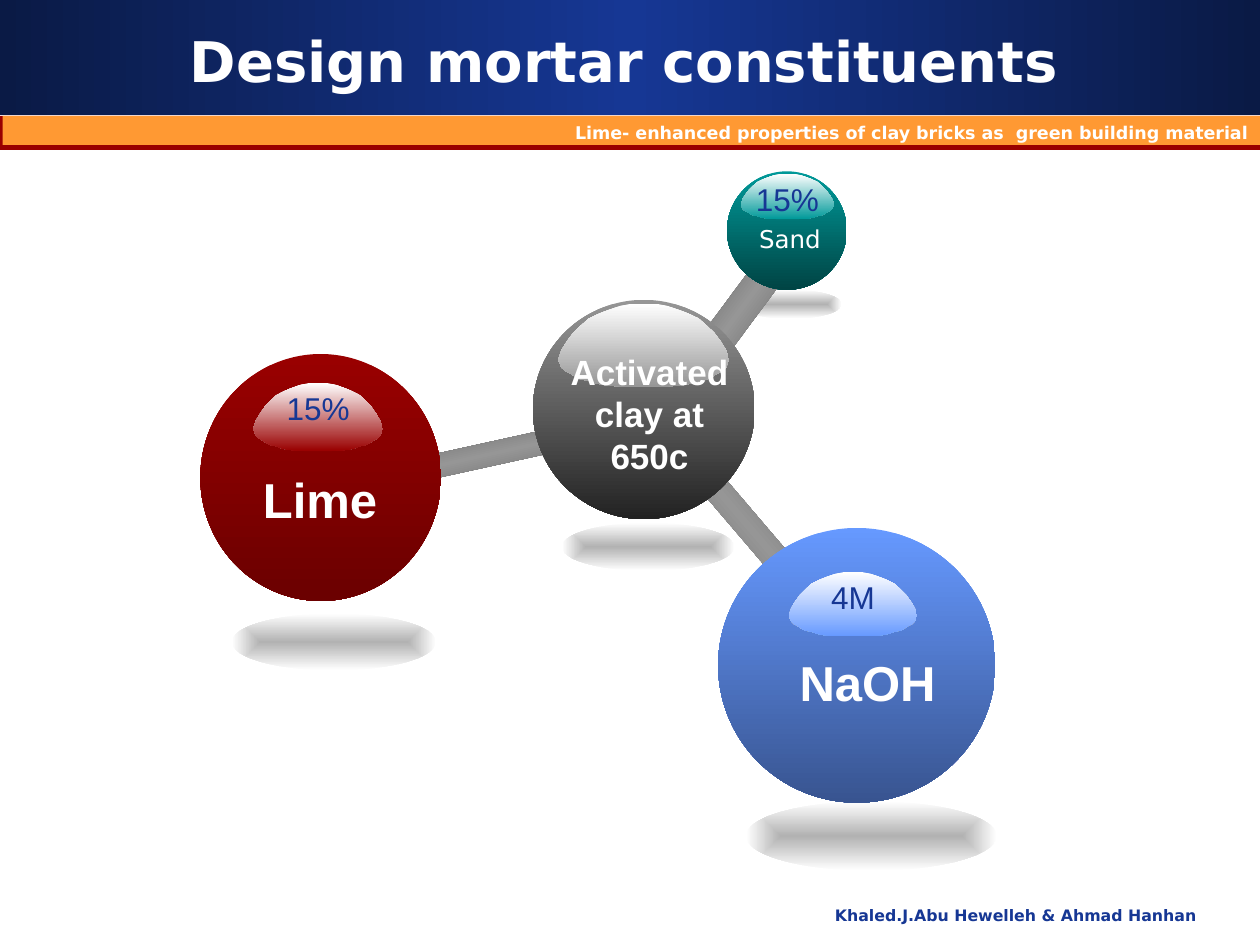
from lxml.etree import SubElement
from pptx import Presentation
from pptx.dml.color import RGBColor
from pptx.enum.shapes import MSO_SHAPE
from pptx.enum.text import MSO_ANCHOR, PP_ALIGN
from pptx.oxml.ns import qn
from pptx.util import Inches, Pt

HEX = {
    "navy": "0A1A45", "blue": "163794", "red": "990000", "orange": "FF9933",
    "white": "FFFFFF", "shade": "B2B2B2", "grey": "969696", "steel": "6B6B6B",
    "coal": "222222", "teal": "009999", "pine": "004444", "wine": "6B0000",
    "sky": "6699FF", "slate": "385490",
}
SANS, ARIAL = "DejaVu Sans", "Arial"

TITLE = "Design mortar constituents"
TOPIC = "Lime- enhanced properties of clay bricks as  green building material"
AUTHORS = "Khaled.J.Abu Hewelleh & Ahmad Hanhan"

# Boxes are left, top, width, height in inches
SHADOWS = [
    (5.87, 2.3, 0.81, 0.23), (4.46, 4.15, 1.37, 0.38),
    (5.92, 6.36, 1.99, 0.55), (1.84, 4.87, 1.62, 0.45),
]
RODS = [
    ((5.38, 4.03, 1.05, 0.21), 229.5),
    ((3.2, 3.54, 1.1, 0.19), 347.6),
    ((5.56, 2.32, 0.65, 0.26), 306.6),
]
BALLS = [
    dict(box=(4.23, 2.38, 1.76, 1.74), top="grey", low="coal",
         gloss=(4.43, 2.41, 1.36, 0.66), share="",
         name="Activated clay at 650c", label=(4.29, 2.73, 1.73, 1.11),
         font=ARIAL, size=20, bold=True, wrap=True),
    dict(box=(5.77, 1.36, 0.95, 0.94), top="teal", low="pine",
         gloss=(5.88, 1.38, 0.74, 0.36), share="15%",
         name="Sand", label=(5.92, 1.73, 0.7, 0.34),
         font=SANS, size=14, bold=False, wrap=False),
    dict(box=(1.59, 2.81, 1.91, 1.96), top="red", low="wine",
         gloss=(2.01, 3.04, 1.03, 0.54), share="15%",
         name="Lime", label=(1.98, 3.68, 1.12, 0.57),
         font=ARIAL, size=28, bold=True, wrap=False),
    dict(box=(5.7, 4.19, 2.2, 2.18), top="sky", low="slate",
         gloss=(6.26, 4.54, 1.02, 0.51), share="4M",
         name="NaOH", label=(6.24, 5.13, 1.29, 0.57),
         font=ARIAL, size=28, bold=True, wrap=False),
]
# Right half of a highlight, in percent of its box; the left half mirrors it
HALF = [
    (50, 0), (57, 0), (64, 3), (71, 8), (76, 12), (82, 18), (87, 27),
    (91, 35), (95, 46), (98, 56), (100, 68), (99, 72), (98, 77), (96, 81),
    (93, 84), (90, 88), (87, 91), (82, 93), (78, 96), (73, 98), (68, 99),
    (60, 100),
]
DOME = HALF + [(100 - x, y) for x, y in reversed(HALF[1:])]


def inches(box):
    return [Inches(n) for n in box]


def color(name):
    return RGBColor.from_string(HEX[name])


def blend(shape, names, angle=None):
    """Fill with evenly spaced colours; without an angle, from the centre out."""
    shape.fill.gradient()
    grad = shape._element.spPr.find(qn("a:gradFill"))
    for child in list(grad):
        grad.remove(child)
    stops = SubElement(grad, qn("a:gsLst"))
    for i, name in enumerate(names):
        pos = str(100000 * i // (len(names) - 1))
        stop = SubElement(stops, qn("a:gs"), pos=pos)
        SubElement(stop, qn("a:srgbClr"), val=HEX[name])
    if angle is None:
        way = SubElement(grad, qn("a:path"), path="shape")
        SubElement(way, qn("a:fillToRect"), l="50000", t="50000",
                   r="50000", b="50000")
    else:
        SubElement(grad, qn("a:lin"), ang=str(angle * 60000), scaled="0")


def plain(shape):
    shape.shadow.inherit = False
    shape.line.fill.background()
    return shape


def draw(shapes, kind, box):
    return plain(shapes.add_shape(kind, *inches(box)))


def dome(shapes, box):
    left, top, wide, high = box
    spots = [(Inches(left + wide * x / 100), Inches(top + high * y / 100))
             for x, y in DOME]
    path = shapes.build_freeform(*spots[0])
    path.add_line_segments(spots[1:], close=True)
    return plain(path.convert_to_shape())


def write(shape, text, font, size, ink, bold=False, align=PP_ALIGN.CENTER,
          anchor=MSO_ANCHOR.TOP, wrap=True):
    frame = shape.text_frame
    frame.text = text
    frame.word_wrap = wrap
    frame.vertical_anchor = anchor
    para = frame.paragraphs[0]
    para.alignment = align
    face = para.runs[0].font
    face.name, face.size, face.bold = font, Pt(size), bold
    face.color.rgb = color(ink)


def header(slide):
    shapes = slide.shapes
    blend(draw(shapes, MSO_SHAPE.RECTANGLE, (0, 0, 10, 0.91)),
          ["navy", "blue", "navy"], 0)
    for name, box in [("red", (0, 0.92, 10, 0.27)),
                      ("orange", (0.02, 0.92, 9.98, 0.23))]:
        band = draw(shapes, MSO_SHAPE.RECTANGLE, box)
        band.fill.solid()
        band.fill.fore_color.rgb = color(name)
    write(band, TOPIC, SANS, 10, "white", True, PP_ALIGN.RIGHT)

    title = shapes.title
    title.left, title.top, title.width, title.height = inches(
        (0.33, 0.17, 9.25, 0.62))
    write(title, TITLE, SANS, 32, "white", True, anchor=MSO_ANCHOR.MIDDLE)
    shapes._spTree.append(title._element)  # bring in front of the banner


def model(shapes):
    for box in SHADOWS:
        blend(draw(shapes, MSO_SHAPE.OVAL, box), ["shade", "white"])
    for box, turn in RODS:
        rod = draw(shapes, MSO_SHAPE.RECTANGLE, box)
        rod.rotation = turn
        blend(rod, ["steel", "grey", "steel"], 90)
    for ball in BALLS:
        blend(draw(shapes, MSO_SHAPE.OVAL, ball["box"]),
              [ball["top"], ball["low"]], 90)
        gloss = dome(shapes, ball["gloss"])
        blend(gloss, ["white", ball["top"]], 90)
        if ball["share"]:
            write(gloss, ball["share"], ARIAL, 18, "blue")
            gloss.text_frame.margin_left = gloss.text_frame.margin_right = 0
        label = shapes.add_textbox(*inches(ball["label"]))
        write(label, ball["name"], ball["font"], ball["size"], "white",
              ball["bold"], wrap=ball["wrap"])


def main():
    deck = Presentation()
    deck.slide_width, deck.slide_height = Inches(10), Inches(7.5)
    slide = deck.slides.add_slide(deck.slide_layouts[5])
    header(slide)
    footer = slide.shapes.add_textbox(*inches((5.24, 7.14, 4.35, 0.28)))
    write(footer, AUTHORS, SANS, 9, "blue", True, PP_ALIGN.RIGHT)
    model(slide.shapes.add_group_shape().shapes)
    deck.save("out.pptx")


if __name__ == "__main__":
    main()
